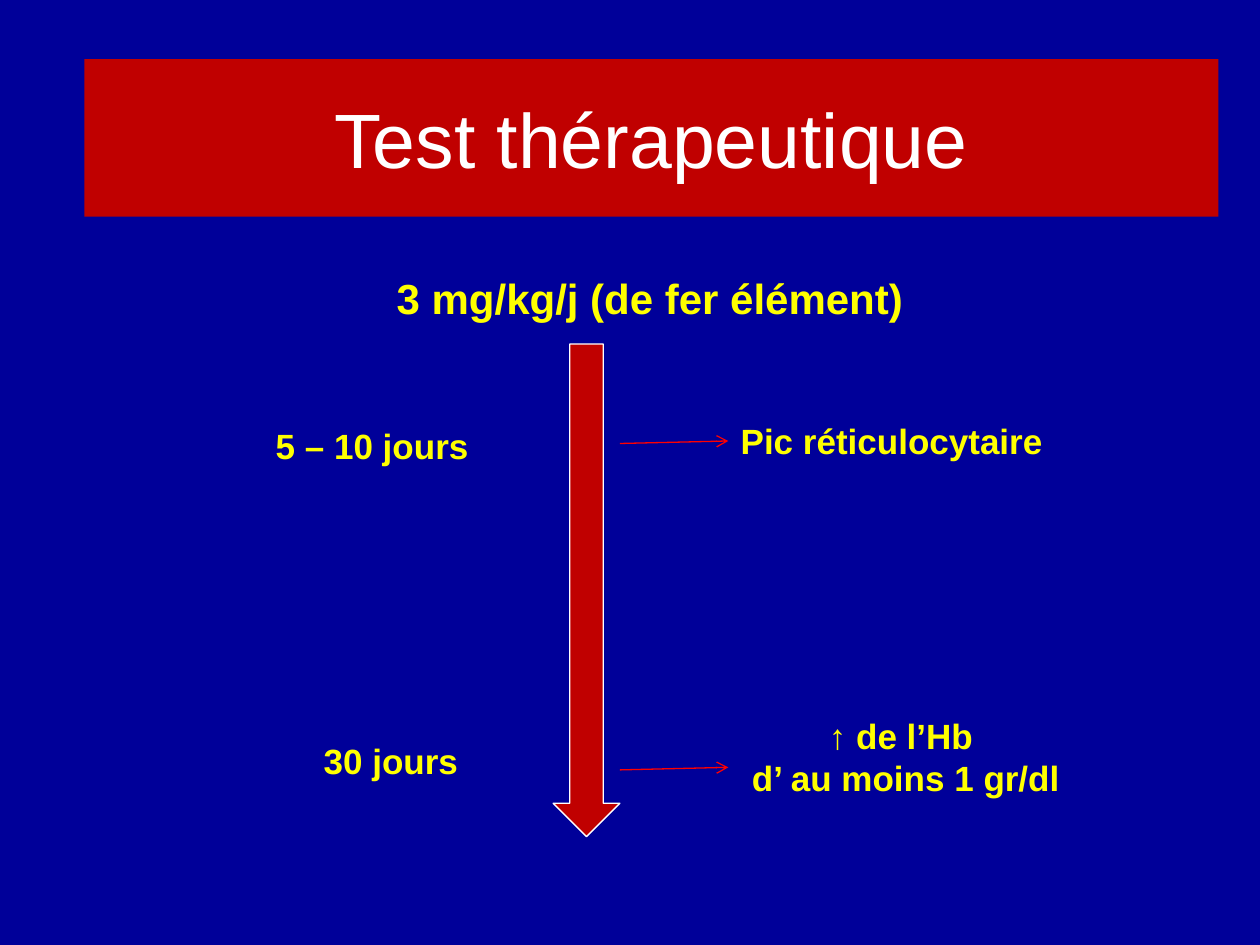
from lxml.etree import SubElement
from pptx import Presentation
from pptx.dml.color import RGBColor
from pptx.enum.shapes import MSO_CONNECTOR as CONNECTOR, MSO_SHAPE as SHAPE
from pptx.enum.text import MSO_ANCHOR as ANCHOR, MSO_AUTO_SIZE as AUTO_SIZE, PP_ALIGN as ALIGN
from pptx.oxml.ns import qn
from pptx.util import Pt

NAVY = RGBColor(0x00, 0x00, 0x99)
DARK_RED = RGBColor(0xC0, 0x00, 0x00)
RED = RGBColor(0xFF, 0x00, 0x00)
YELLOW = RGBColor(0xFF, 0xFF, 0x00)
WHITE = RGBColor(0xFF, 0xFF, 0xFF)

# Content: lines, box (left, top, width, height), size, alignment
TITLE = "Test thérapeutique"
TITLE_BOX = (48.24, 33.84, 648, 90)
LABELS = [
    (["3 mg/kg/j (de fer élément)"], (219.6, 151.92, 306.72, 36.72), 24, ALIGN.LEFT),
    (["5 – 10 jours"], (150.48, 239.04, 125.28, 31.68), 20, ALIGN.LEFT),
    (["30 jours"], (177.84, 419.04, 92.16, 31.68), 20, ALIGN.LEFT),
    (["Pic réticulocytaire"], (416.16, 236.16, 187.92, 31.68), 20, ALIGN.LEFT),
    (["↑ de l’Hb ", "d’ au moins 1 gr/dl"], (421.92, 404.64, 191.52, 55.44), 20, ALIGN.CENTER),
]
TIMELINE_BOX = (316.08, 196.56, 38.16, 281.52)
RESULT_ARROW_TOPS = [252, 438.5]
RESULT_ARROW_LEFT, RESULT_ARROW_RIGHT, RESULT_ARROW_RISE = 354.24, 416.16, 1.44


def points(values):
    return [Pt(value) for value in values]


def place(shape, box):
    shape.left, shape.top, shape.width, shape.height = points(box)


def set_fill(target, color):
    target.fill.solid()
    target.fill.fore_color.rgb = color


def write(shape, lines, alignment, color, font_values, frame_values):
    frame = shape.text_frame
    frame.text = "\n".join(lines)
    for name, value in frame_values.items():
        setattr(frame, name, value)
    for paragraph in frame.paragraphs:
        paragraph.alignment = alignment
        font = paragraph.runs[0].font
        font.color.rgb = color
        for name, value in font_values.items():
            setattr(font, name, value)


def add_result_arrow(slide, top):
    ends = (RESULT_ARROW_LEFT, top + RESULT_ARROW_RISE, RESULT_ARROW_RIGHT, top)
    arrow = slide.shapes.add_connector(CONNECTOR.STRAIGHT, *points(ends))
    arrow.line.color.rgb = RED
    arrow.line.width = Pt(0.75)
    SubElement(arrow.line._get_or_add_ln(), qn("a:tailEnd"), type="arrow")
    SubElement(arrow._element.spPr, qn("a:effectLst"))


def main():
    presentation = Presentation()
    presentation.slide_width, presentation.slide_height = Pt(720), Pt(540)
    slide = presentation.slides.add_slide(presentation.slide_layouts[5])
    set_fill(slide.background, NAVY)

    # Title band
    title = slide.shapes.title
    place(title, TITLE_BOX)
    set_fill(title, DARK_RED)
    write(title, [TITLE], ALIGN.CENTER, WHITE,
          {"name": "Arial", "size": Pt(44)},
          {"vertical_anchor": ANCHOR.MIDDLE, "auto_size": AUTO_SIZE.NONE})

    # Dose, times and results
    for lines, box, size, alignment in LABELS:
        label = slide.shapes.add_textbox(*points(box))
        write(label, lines, alignment, YELLOW,
              {"name": "Arial", "size": Pt(size), "bold": True},
              {"word_wrap": False, "auto_size": AUTO_SIZE.SHAPE_TO_FIT_TEXT})

    # Timeline arrow
    timeline = slide.shapes.add_shape(SHAPE.DOWN_ARROW, *points(TIMELINE_BOX))
    timeline.shadow.inherit = False
    set_fill(timeline, DARK_RED)
    timeline.line.color.rgb = WHITE
    timeline.line.width = Pt(0.75)

    # Arrows to the results
    for top in RESULT_ARROW_TOPS:
        add_result_arrow(slide, top)

    presentation.save("out.pptx")


if __name__ == "__main__":
    main()
